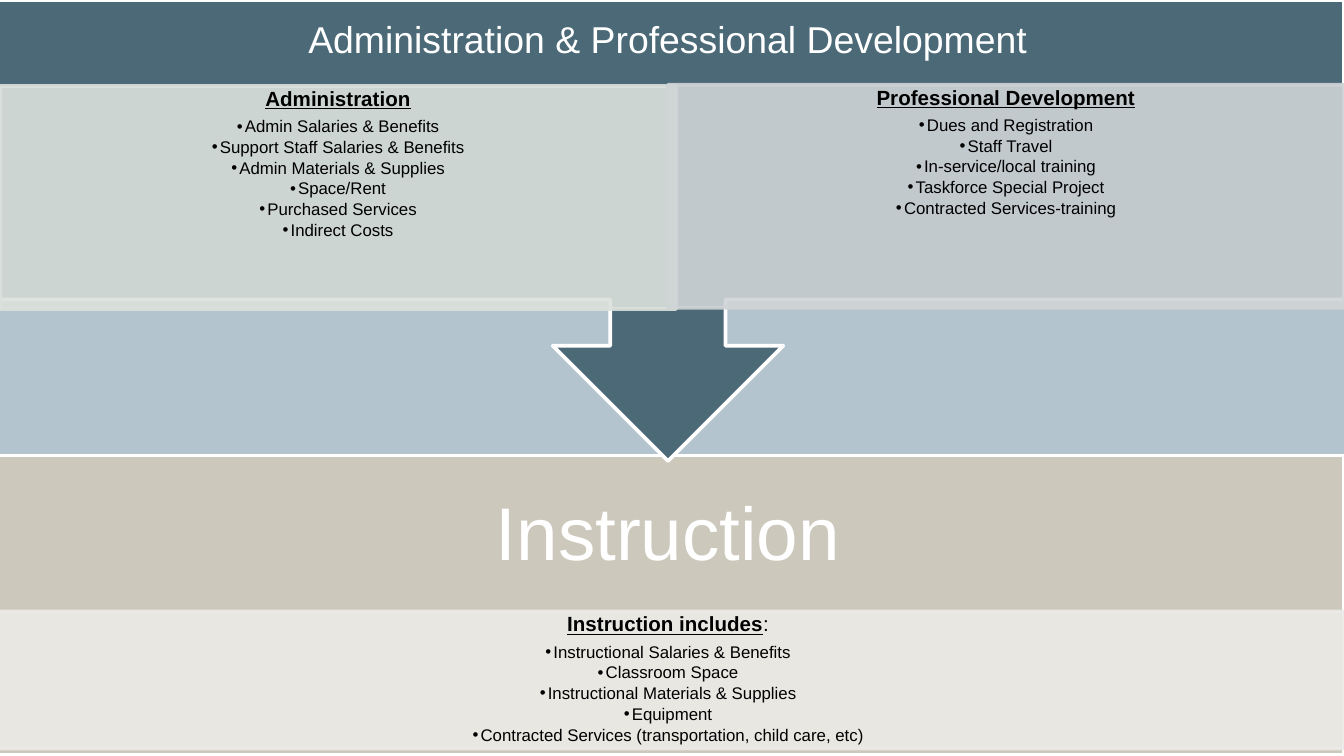
"""Build a slide that shows administration and professional development leading to instruction."""
import pptx
import pptx.dml.color
import pptx.enum.shapes
import pptx.enum.text
import pptx.oxml
import pptx.oxml.ns
import pptx.util
from lxml import etree

Inches = pptx.util.Inches
Pt = pptx.util.Pt
COLORS = {
    "background": "B4C4CE", "callout": "4B6977", "instruction": "CCC8BC",
    "includes": "ECEBE7", "administration": "DBE1DC", "development": "D0D4D6",
    "white": "FFFFFF", "black": "000000",
}
BULLET = '<a:{} xmlns:a="http://schemas.openxmlformats.org/drawingml/2006/main" {}'


def paint(shape, fill, line, opacity=100):
    """Fill and outline a shape, with the same opacity for both."""
    shape.fill.solid()
    shape.line.width = Pt(2)
    shape.line.fill.solid()
    for color, name in ((shape.fill.fore_color, fill), (shape.line.color, line)):
        color.rgb = pptx.dml.color.RGBColor.from_string(COLORS[name])
    if opacity < 100:
        for color in shape.element.spPr.iter(pptx.oxml.ns.qn("a:srgbClr")):
            etree.SubElement(color, pptx.oxml.ns.qn("a:alpha"), val=str(opacity * 1000))


def style(para, size, color, after, bullet=False):
    """Centre a paragraph, set its spacing and bullet, and format its runs."""
    para.alignment = pptx.enum.text.PP_ALIGN.CENTER
    para.line_spacing = 0.9
    para.space_before = Pt(0)
    para.space_after = Pt(after)
    para.level = int(bullet)
    properties = para._p.get_or_add_pPr()
    properties.set("marL", str(Inches(0.06 if bullet else 0)))
    properties.set("indent", str(Inches(-0.06 if bullet else 0)))
    if bullet:
        properties.append(pptx.oxml.parse_xml(
            BULLET.format("buClr", f'><a:srgbClr val="{COLORS["black"]}"/></a:buClr>')))
        properties.append(pptx.oxml.parse_xml(BULLET.format("buChar", 'char="•"/>')))
    else:
        properties.append(pptx.oxml.parse_xml(BULLET.format("buNone", "/>")))
    for span in para.runs:
        span.font.name = "Arial"
        span.font.size = Pt(size)
        span.font.bold = False
        span.font.color.rgb = pptx.dml.color.RGBColor.from_string(COLORS[color])


deck = pptx.Presentation()
deck.slide_width = Inches(10)
deck.slide_height = Inches(10 * 9 / 16)
page = deck.slides.add_slide(deck.slide_layouts.get_by_name("Comparison"))
page.background.fill.solid()
page.background.fill.fore_color.rgb = pptx.dml.color.RGBColor.from_string(COLORS["background"])
title, heading, *lists = page.placeholders

shape_kinds = pptx.enum.shapes.MSO_SHAPE
bands = [
    (shape_kinds.RECTANGLE, 3.39, 2.23, 0, "instruction"),
    (shape_kinds.UP_ARROW_CALLOUT, 0, 3.43, 180, "callout"),
]
for kind, top, height, rotation, fill in bands:
    band = page.shapes.add_shape(kind, Inches(-0.06), Inches(top), Inches(10.06), Inches(height))
    band.rotation = rotation
    band.shadow.inherit = False
    paint(band, fill, "white")

anchors = pptx.enum.text.MSO_ANCHOR
headings = [
    (heading, "Instruction", 3.39, 40, 0.31, anchors.MIDDLE),
    (title, "Administration & Professional Development", 0, 20, 0.16, anchors.TOP),
]
panels = [
    (-0.06, 4.55, 10.06, 1.02, "includes", "Instruction includes", ":", [
        "Instructional Salaries & Benefits", "Classroom Space",
        "Instructional Materials & Supplies", "Equipment",
        "Contracted Services (transportation, child care, etc)"]),
    (0, 0.64, 5.03, 1.66, "administration", "Administration", "", [
        "Admin Salaries & Benefits", "Support Staff Salaries & Benefits",
        "Admin Materials & Supplies", "Space/Rent", "Purchased Services", "Indirect Costs"]),
    (4.97, 0.63, 5.03, 1.66, "development", "Professional Development", "", [
        "Dues and Registration", "Staff Travel", "In-service/local training",
        "Taskforce Special Project", "Contracted Services-training"]),
]

layouts = [(box, -0.06, top, 10.06, 1.2, inset, inset, anchor)
           for box, text, top, size, inset, anchor in headings]
layouts += [(box, *panel[:4], 0.09, 0.02, anchors.TOP) for box, panel in zip(lists, panels)]
for box, left, top, width, height, side, edge, anchor in layouts:
    box.left, box.top = Inches(left), Inches(top)
    box.width, box.height = Inches(width), Inches(height)
    frame = box.text_frame
    frame.word_wrap = True
    frame.auto_size = pptx.enum.text.MSO_AUTO_SIZE.NONE
    frame.vertical_anchor = anchor
    frame.margin_left = frame.margin_right = Inches(side)
    frame.margin_top = frame.margin_bottom = Inches(edge)
    box.element.getparent().append(box.element)

for box, text, top, size, inset, anchor in headings:
    box.text_frame.text = text
    style(box.text_frame.paragraphs[0], size, "white", 0)

for box, (left, top, width, height, color, caption, ending, items) in zip(lists, panels):
    paint(box, color, color, 90)
    box.text_frame.text = caption
    para = box.text_frame.paragraphs[0]
    if ending:
        para.add_run().text = ending
    style(para, 11, "black", 3.85)
    para.runs[0].font.bold = True
    para.runs[0].font.underline = True
    for item in items:
        para = box.text_frame.add_paragraph()
        para.text = item
        style(para, 9, "black", 1.35, bullet=True)

deck.save("out.pptx")
